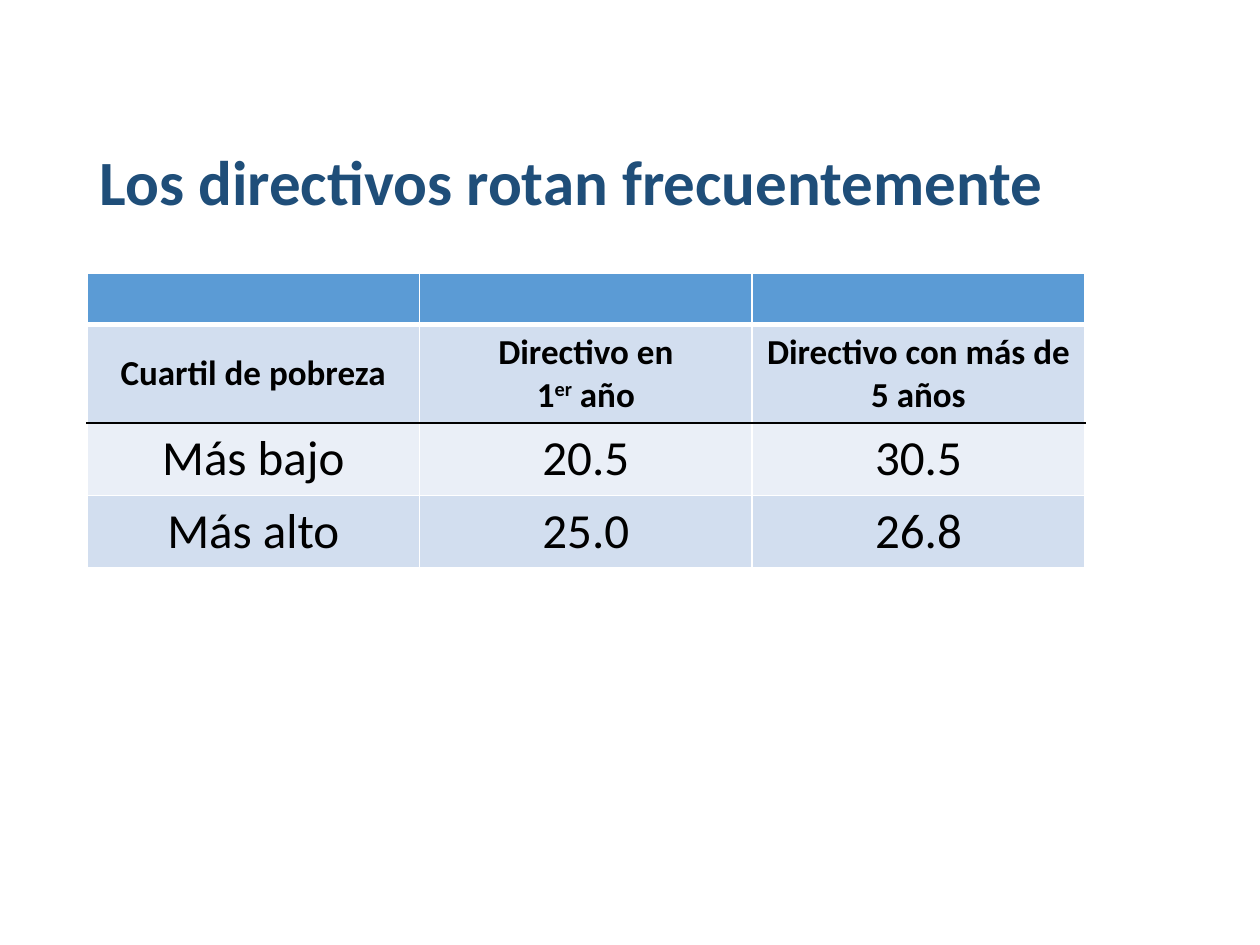
from dataclasses import dataclass

from lxml import etree
from pptx import Presentation
from pptx.dml.color import RGBColor
from pptx.enum import text
from pptx.oxml import ns
from pptx.util import Inches, Pt


@dataclass(frozen=True)
class Theme:
    """Colours, font and type sizes of the slide."""
    font: str = "Calibri"
    title: str = "1F4E79"
    ink: str = "000000"
    line: str = "FFFFFF"
    head: str = "5B9BD5"
    dark: str = "D2DEEF"
    pale: str = "EAEFF7"
    big: int = 36
    mid: int = 28
    small: int = 20


THEME = Theme()
ROWS = [
    ["", "", ""],
    ["Cuartil de pobreza", "Directivo en\n1er año", "Directivo con más de 5 años"],
    ["Más bajo", "20.5", "30.5"],
    ["Más alto", "25.0", "26.8"],
]


def style(font, size, color, bold):
    """Set the face, size, colour and weight of a font."""
    font.name, font.size, font.bold = THEME.font, Pt(size), bold
    font.color.rgb = RGBColor.from_string(color)


def add_edge(cell, side, color, width):
    """Draw one border of a cell."""
    props = cell._tc.get_or_add_tcPr()
    edge = etree.SubElement(props, ns.qn(f"a:ln{side}"), w=str(Pt(width)))
    fill = etree.SubElement(edge, ns.qn("a:solidFill"))
    etree.SubElement(fill, ns.qn("a:srgbClr"), val=color)


def fill_cell(cell, words, fill, size, bold, top, base):
    """Write and format one cell with its borders."""
    white = (THEME.line, 1)
    for side, pen in zip("LRTB", (white, white, top, base)):
        add_edge(cell, side, *pen)
    cell.fill.solid()
    cell.fill.fore_color.rgb = RGBColor.from_string(fill)
    cell.vertical_anchor = text.MSO_ANCHOR.MIDDLE
    cell.text_frame.text = words
    for para in cell.text_frame.paragraphs:
        para.alignment = text.PP_ALIGN.CENTER
        for run in para.runs:
            style(run.font, size, THEME.ink, bold)


def raise_part(para, parts):
    """Split a paragraph into three runs and raise the middle one."""
    first = para.runs[0]
    first.text = parts[0]
    for part in parts[1:]:
        run = para.add_run()
        run.text = part
        style(run.font, THEME.small, THEME.ink, True)
    para.runs[1].font._element.set("baseline", "30000")


def add_title(slide, box):
    """Place the slide title in its box."""
    title = slide.shapes.title
    title.left, title.top, title.width, title.height = box
    frame = title.text_frame
    frame.text = "Los directivos rotan frecuentemente"
    frame.vertical_anchor = text.MSO_ANCHOR.MIDDLE
    para = frame.paragraphs[0]
    para.alignment = text.PP_ALIGN.LEFT
    para.line_spacing = 0.9
    style(para.runs[0].font, THEME.big, THEME.title, True)


def add_grid(slide, box):
    """Place the table of rotation by poverty quartile in its box."""
    grid = slide.shapes.add_table(len(ROWS), len(ROWS[0]), *box).table
    grid.first_row = grid.horz_banding = False
    thin, thick, rule = (THEME.line, 1), (THEME.line, 3), (THEME.ink, 1)
    looks = [
        (0.4, THEME.head, THEME.small, True, thin, thick),
        (0.78, THEME.dark, THEME.small, True, thick, rule),
        (0.57, THEME.pale, THEME.mid, False, rule, thin),
        (0.57, THEME.dark, THEME.mid, False, thin, thin),
    ]
    for r, (words, (high, *look)) in enumerate(zip(ROWS, looks)):
        grid.rows[r].height = Inches(high)
        for c, word in enumerate(words):
            fill_cell(grid.cell(r, c), word, *look)
    raise_part(grid.cell(1, 1).text_frame.paragraphs[1], ["1", "er", " año"])


def main():
    """Build the slide and save it."""
    deck = Presentation()
    deck.slide_width, deck.slide_height = Inches(10), Inches(7.5)
    slide = deck.slides.add_slide(deck.slide_layouts[5])
    add_title(slide, [Inches(n) for n in (0.69, 1.09, 8.62, 0.76)])
    add_grid(slide, [Inches(n) for n in (0.69, 2.17, 7.92, 2.32)])
    deck.save("out.pptx")


if __name__ == "__main__":
    main()
